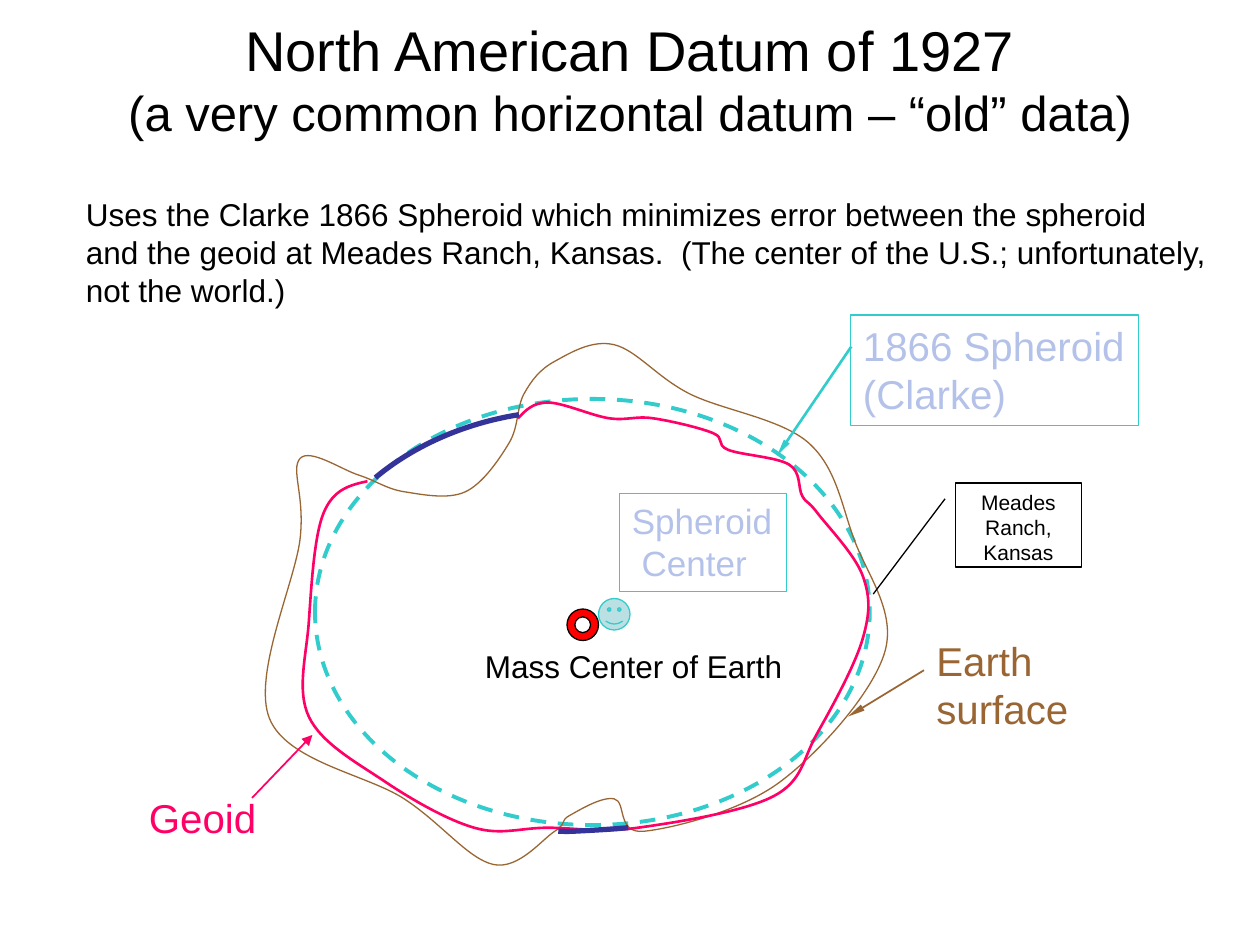
import copy
import pptx
import pptx.util
import pptx.dml.color
import pptx.enum.dml
import pptx.enum.shapes
import pptx.enum.text
import pptx.oxml
import pptx.oxml.ns

Pt = pptx.util.Pt
Kind = pptx.enum.shapes.MSO_SHAPE
Align = pptx.enum.text.PP_ALIGN
Anchor = pptx.enum.text.MSO_ANCHOR
qn = pptx.oxml.ns.qn
space = pptx.oxml.ns.nsdecls("a")
teal, brown, pink, navy, pale = "33CCCC", "996633", "FF0066", "333399", "B4C2EA"


def color(part, code):
    if hasattr(part, "solid"):
        part.solid()
        part = part.fore_color
    part.rgb = pptx.dml.color.RGBColor.from_string(code)


def write(para, text, size, code):
    run = para.add_run()
    run.text = text
    run.font.name = "Arial"
    run.font.size = Pt(size)
    color(run.font.color, code)


deck = pptx.Presentation()
deck.slide_width, deck.slide_height = Pt(720), Pt(540)
slide = deck.slides.add_slide(deck.slide_layouts[5])
shapes = slide.shapes

title = shapes.title
title.left, title.top, title.width, title.height = Pt(36), Pt(0), Pt(648), Pt(90)
title.text_frame.vertical_anchor = Anchor.MIDDLE
head = title.text_frame.paragraphs[0]
head.alignment = Align.CENTER
write(head, "North American Datum of 1927", 32, "000000")
head.add_line_break()
write(head, "(a very common horizontal datum – “old” data)", 28, "000000")

earth = [(205, 271.5), (231, 281), (266, 281), (291, 253), (299.5, 225),
         (317, 206.5), (351, 197), (394, 225), (462, 253), (488, 308),
         (505.5, 373), (445.5, 447), (368, 475), (351, 456.5), (325.5, 466),
         (317, 475), (282, 494), (231, 456.5), (154, 410.5), (171.5, 308),
         (171.5, 262)]
earth = earth[-1:] + earth + earth[:2]
geoid = [(287, 256), (296, 239), (313, 230), (348, 239), (373, 239),
         (407.5, 247.5), (416, 257), (451, 265.5), (458.5, 283.5), (467, 293),
         (493, 329), (493, 365), (467, 419), (442, 455), (364.5, 473),
         (313, 473), (271, 473), (219, 446), (176.5, 409.5), (176.5, 355.5),
         (185, 293), (210, 275), (245.5, 280)]
north = [(167.5, 345), (214.5, 273), (296.5, 237), (403.5, 243)]
south = [(389, 469), (359, 473), (328.5, 475), (319, 475), (309, 475)]

ring = shapes.add_shape(Kind.OVAL, Pt(180), Pt(228), Pt(317), Pt(243.5))
ring.line.dash_style = pptx.enum.dml.MSO_LINE.DASH

curves = []
for knots, code, width, closed, apex in [
    (earth, brown, 0.75, True, None),
    (geoid, pink, 1.5, False, None),
    (north, navy, 3, False, (329, 356)),
    (south, navy, 3, False, (328.5, 354)),
]:
    dots = []
    for a, b, c, d in zip(knots, knots[1:], knots[2:], knots[3:]):
        dots += [
            tuple(q + (r - p) / 6 for p, q, r in zip(a, b, c)),
            tuple(q - (r - p) / 6 for p, q, r in zip(b, c, d)),
            c]
    if apex:
        dots.append(apex)
    dots = [(100 * x, 100 * y) for x, y in dots]
    x, y = knots[1]
    pen = shapes.build_freeform(100 * x, 100 * y, scale=Pt(1) / 100)
    pen.add_line_segments(dots, close=closed or bool(apex))
    shape = pen.convert_to_shape()
    trace = shape._element.find(".//" + qn("a:path"))
    lines = trace.findall(qn("a:lnTo"))
    for trio in zip(lines[::3], lines[1::3], lines[2::3]):
        bend = pptx.oxml.parse_xml("<a:cubicBezTo %s/>" % space)
        trio[0].addprevious(bend)
        for line in trio:
            bend.append(line[0])
            trace.remove(line)
    if apex:
        wedge = copy.deepcopy(trace)
        wedge.set("stroke", "0")
        trace.addnext(wedge)
        trace.set("fill", "none")
        for part in trace[-2:]:
            trace.remove(part)
    curves.append((shape, None, code, width))

call = shapes.add_shape(Kind.LINE_CALLOUT_1, Pt(546), Pt(276), Pt(72), Pt(48))
for i, share in enumerate([0.188, -0.083, 1.323, -0.653]):
    call.adjustments[i] = share
frame = call.text_frame
frame.word_wrap = True
frame.vertical_anchor = Anchor.TOP
frame.paragraphs[0].alignment = Align.CENTER
write(frame.paragraphs[0], "Meades Ranch, Kansas", 12, "000000")

smile = shapes.add_shape(Kind.SMILEY_FACE, Pt(342), Pt(342), Pt(18), Pt(18))
mass = shapes.add_shape(Kind.DONUT, Pt(324), Pt(348), Pt(18), Pt(18))

for shape, fill, code, width in curves + [
    (ring, None, teal, 2.25),
    (call, None, "000000", 0.75),
    (smile, "BBE0E3", teal, 0.75),
    (mass, "FF0000", "000000", 0.75),
]:
    shape.shadow.inherit = False
    if fill:
        color(shape.fill, fill)
    else:
        shape.fill.background()
    color(shape.line.color, code)
    shape.line.width = Pt(width)

for x, y, to_x, to_y, code, width, tip in [
    (486.5, 198, 444, 260.5, teal, 1.5, 'tailEnd %s type="triangle" w="sm" len="lg"'),
    (528, 383, 484.5, 409.5, brown, 1, 'tailEnd %s type="triangle" w="sm" len="lg"'),
    (178.5, 420, 144, 456, pink, 1, 'headEnd %s type="triangle"'),
]:
    arrow = shapes.add_connector(
        pptx.enum.shapes.MSO_CONNECTOR.STRAIGHT, Pt(x), Pt(y), Pt(to_x), Pt(to_y))
    color(arrow.line.color, code)
    arrow.line.width = Pt(width)
    props = arrow._element.spPr
    props.find(qn("a:ln")).append(pptx.oxml.parse_xml("<a:" + tip % space + "/>"))
    props.append(pptx.oxml.parse_xml("<a:effectLst %s/>" % space))

for x, y, wide, high, size, code, edge, wrap, lines in [
    (486, 180, 164.5, 63, 23, pale, teal, False, ["1866 Spheroid", "(Clarke)"]),
    (78, 450, 78, 35, 23, pink, None, False, ["Geoid"]),
    (528, 360, 150, 62, 23, brown, None, True, ["Earth surface"]),
    (354, 282, 95.5, 56, 20, pale, teal, False, ["Spheroid", " Center"]),
    (270, 366, 187, 29, 18, "000000", None, False, ["Mass Center of Earth"]),
    (42, 108, 655, 72, 18, "000000", None, False, [
        "Uses the Clarke 1866 Spheroid which minimizes error between the spheroid",
        "and the geoid at Meades Ranch, Kansas.  (The center of the U.S.; unfortunately,",
        "not the world.)"]),
]:
    box = shapes.add_textbox(Pt(x), Pt(y), Pt(wide), Pt(high))
    if edge:
        color(box.line.color, edge)
        box.line.width = Pt(0.75)
    frame = box.text_frame
    frame.word_wrap = wrap
    for i, line in enumerate(lines):
        para = frame.add_paragraph() if i else frame.paragraphs[0]
        write(para, line, size, code)

deck.save("out.pptx")
